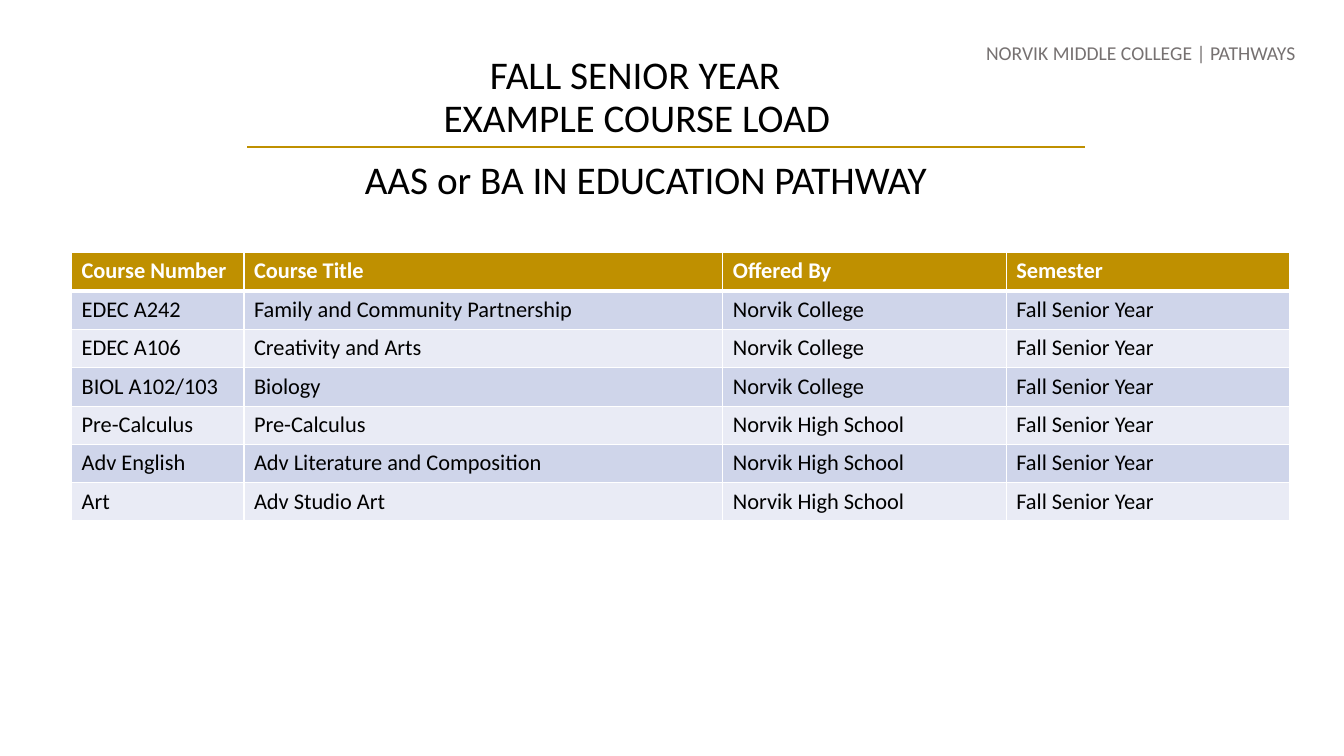
from dataclasses import dataclass

from lxml import etree
from pptx import Presentation
from pptx.dml.color import RGBColor
from pptx.enum.shapes import MSO_CONNECTOR
from pptx.enum.text import MSO_ANCHOR, MSO_AUTO_SIZE, PP_ALIGN
from pptx.oxml.ns import qn
from pptx.slide import Slide
from pptx.util import Inches, Pt

LEFT, CENTER, RIGHT = PP_ALIGN.LEFT, PP_ALIGN.CENTER, PP_ALIGN.RIGHT
TOP = MSO_ANCHOR.TOP
NO_AUTOFIT = MSO_AUTO_SIZE.NONE
STRAIGHT = MSO_CONNECTOR.STRAIGHT

FONT = "Calibri"
GOLD, WHITE, BLACK, GRAY = "BF9000", "FFFFFF", "000000", "767171"
BANDS = ("CFD5EA", "E9EBF5")
TITLE_ONLY_LAYOUT = 5


@dataclass(frozen=True)
class Heading:
    text: str
    left: float
    top: float
    width: float
    height: float
    size: int = 28
    color: str = BLACK
    align: PP_ALIGN = CENTER
    is_title: bool = False


@dataclass(frozen=True)
class Course:
    number: str
    title: str
    offered_by: str
    semester: str = "Fall Senior Year"


HEADINGS = [
    Heading("FALL SENIOR YEAR", 4.76, 0.45, 3.2, 0.57, align=LEFT, is_title=True),
    Heading("EXAMPLE COURSE LOAD", 2.41, 0.88, 7.81, 0.57),
    Heading("AAS or BA IN EDUCATION PATHWAY", 3.07, 1.49, 6.67, 0.57),
    Heading("NORVIK MIDDLE COLLEGE | PATHWAYS", 9.1, 0.36, 3.85, 0.34, 14, GRAY, RIGHT),
]

COLLEGE, HIGH_SCHOOL = "Norvik College", "Norvik High School"
COLUMN_NAMES = Course("Course Number", "Course Title", "Offered By", "Semester")
COURSES = [
    Course("EDEC A242", "Family and Community Partnership", COLLEGE),
    Course("EDEC A106", "Creativity and Arts", COLLEGE),
    Course("BIOL A102/103", "Biology", COLLEGE),
    Course("Pre-Calculus", "Pre-Calculus", HIGH_SCHOOL),
    Course("Adv English", "Adv Literature and Composition", HIGH_SCHOOL),
    Course("Art", "Adv Studio Art", HIGH_SCHOOL),
]
COLUMN_WIDTHS = (1.71, 4.75, 2.81, 2.81)
HEADER_HEIGHT, ROW_HEIGHT = 0.39, 0.38


def rgb(value: str) -> RGBColor:
    return RGBColor.from_string(value)


def style_paragraph(paragraph, size: int, color: str, bold: bool = False) -> None:
    font = paragraph.font
    font.name, font.size, font.bold = FONT, Pt(size), bold
    font.color.rgb = rgb(color)


def add_heading(slide: Slide, heading: Heading) -> None:
    box = [Inches(v) for v in (heading.left, heading.top, heading.width, heading.height)]
    if heading.is_title:
        shape = slide.shapes.title
        shape.left, shape.top, shape.width, shape.height = box
    else:
        shape = slide.shapes.add_textbox(*box)
    frame = shape.text_frame
    frame.text = heading.text
    frame.word_wrap = True
    frame.auto_size = NO_AUTOFIT
    frame.vertical_anchor = TOP
    paragraph = frame.paragraphs[0]
    paragraph.alignment = heading.align
    style_paragraph(paragraph, heading.size, heading.color)


def add_rule(slide: Slide, left: float, right: float, y: float) -> None:
    rule = slide.shapes.add_connector(
        STRAIGHT, Inches(left), Inches(y), Inches(right), Inches(y))
    rule.line.color.rgb = rgb(GOLD)
    rule.line.width = Pt(1.25)
    etree.SubElement(rule._element.spPr, qn("a:effectLst"))


def set_bottom_border(cell, color: str, width: float) -> None:
    properties = cell._tc.get_or_add_tcPr()
    border = etree.Element(qn("a:lnB"), w=str(Pt(width)))
    fill = etree.SubElement(border, qn("a:solidFill"))
    etree.SubElement(fill, qn("a:srgbClr"), val=color)
    properties.insert(0, border)


def add_course_table(slide: Slide, left: float, top: float) -> None:
    rows = [COLUMN_NAMES, *COURSES]
    height = HEADER_HEIGHT + ROW_HEIGHT * len(COURSES)
    table = slide.shapes.add_table(
        len(rows), len(COLUMN_WIDTHS), Inches(left), Inches(top),
        Inches(sum(COLUMN_WIDTHS)), Inches(height)).table
    for column, width in zip(table.columns, COLUMN_WIDTHS):
        column.width = Inches(width)
    for index, course in enumerate(rows):
        is_header = index == 0
        fill = GOLD if is_header else BANDS[(index - 1) % 2]
        table.rows[index].height = Inches(HEADER_HEIGHT if is_header else ROW_HEIGHT)
        values = (course.number, course.title, course.offered_by, course.semester)
        for cell, value in zip(table.rows[index].cells, values):
            cell.text = value
            cell.fill.solid()
            cell.fill.fore_color.rgb = rgb(fill)
            style_paragraph(cell.text_frame.paragraphs[0], 16,
                            WHITE if is_header else BLACK, is_header)
            if is_header:
                set_bottom_border(cell, WHITE, 3)


def main() -> None:
    presentation = Presentation()
    presentation.slide_width = Inches(13.33)
    presentation.slide_height = Inches(7.5)
    slide = presentation.slides.add_slide(presentation.slide_layouts[TITLE_ONLY_LAYOUT])

    # Course table
    add_course_table(slide, 0.71, 2.5)

    # Headings and the rule beneath them
    for heading in HEADINGS:
        add_heading(slide, heading)
    add_rule(slide, 2.45, 10.76, 1.46)

    presentation.save("out.pptx")


if __name__ == "__main__":
    main()
